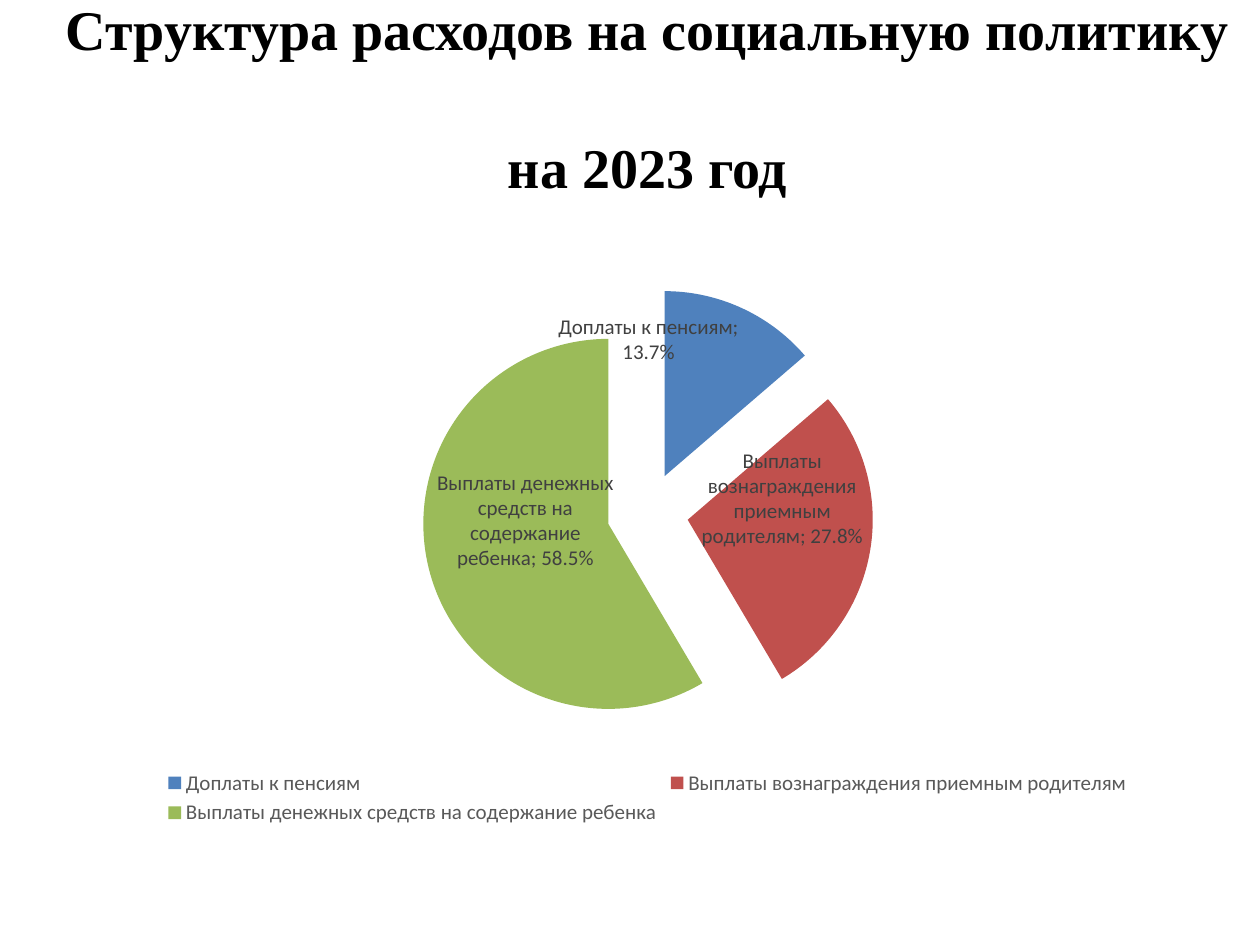
from lxml import etree
from pptx import Presentation
from pptx.chart.data import CategoryChartData
from pptx.dml.color import RGBColor
from pptx.enum.chart import XL_CHART_TYPE, XL_LABEL_POSITION, XL_LEGEND_POSITION
from pptx.enum.text import MSO_ANCHOR, MSO_AUTO_SIZE, PP_ALIGN
from pptx.oxml.ns import qn
from pptx.util import Inches, Pt

PIE = XL_CHART_TYPE.PIE
INSIDE_END = XL_LABEL_POSITION.INSIDE_END
BOTTOM = XL_LEGEND_POSITION.BOTTOM
MIDDLE = MSO_ANCHOR.MIDDLE
NO_AUTOFIT = MSO_AUTO_SIZE.NONE
CENTER = PP_ALIGN.CENTER

COLORS = {"title": "000000", "label": "404040", "legend": "595959"}
TITLE_LINES = ["Структура расходов на социальную политику", "на 2023 год"]
EXPENSES = [
    ("Доплаты к пенсиям", 0.137, "4F81BD"),
    ("Выплаты вознаграждения приемным родителям", 0.278, "C0504D"),
    ("Выплаты денежных средств на содержание ребенка", 0.585, "9BBB59"),
]


def set_font(font, name, size, color, bold=False):
    font.name = name
    font.size = Pt(size)
    font.bold = bold
    font.color.rgb = RGBColor.from_string(COLORS[color])


def set_title(s):
    title = s.shapes.title
    title.left, title.top = Inches(0.39), Inches(0.29)
    title.width, title.height = Inches(9.5), Inches(0.86)
    tf = title.text_frame
    tf.text = "\n".join(TITLE_LINES)
    tf.word_wrap = True
    tf.auto_size = NO_AUTOFIT
    tf.vertical_anchor = MIDDLE
    tf.margin_top = Inches(0.15)
    for p in tf.paragraphs:
        p.alignment = CENTER
        p.space_before = Pt(0)
        set_font(p.font, "Times New Roman", 32, "title", bold=True)
    tf.paragraphs[0].space_after = Pt(40)


def explode(series, percent):
    """Pull all slices away from the centre of the pie."""
    explosion = etree.Element(qn("c:explosion"), val=str(percent))
    series._element.find(qn("c:dPt")).addprevious(explosion)


def format_labels(plot):
    plot.has_data_labels = True
    labels = plot.data_labels
    labels.show_category_name = True
    labels.show_value = True
    labels.show_percentage = False
    labels.number_format = "0.0%"
    labels.number_format_is_linked = False
    labels.position = INSIDE_END
    set_font(labels.font, "Calibri", 12, "label")
    separator = etree.Element(qn("c:separator"))
    separator.text = "; "
    labels._element.find(qn("c:showBubbleSize")).addnext(separator)


def add_expense_pie(s):
    data = CategoryChartData(number_format="0.0%")
    data.categories = [name for name, _, _ in EXPENSES]
    data.add_series("Series 1", [share for _, share, _ in EXPENSES])
    chart = s.shapes.add_chart(
        PIE, Inches(0.28), Inches(1.7), Inches(9.72), Inches(4.89), data
    ).chart
    chart.has_title = False
    set_font(chart.font, "Calibri", 10, "title")
    chart.has_legend = True
    chart.legend.position = BOTTOM
    chart.legend.include_in_layout = False
    set_font(chart.legend.font, "Calibri", 12, "legend")

    plot = chart.plots[0]
    plot.vary_by_categories = True
    series = plot.series[0]
    for i, (_, _, color) in enumerate(EXPENSES):
        fill = series.points[i].format.fill
        fill.solid()
        fill.fore_color.rgb = RGBColor.from_string(color)
    explode(series, 22)
    format_labels(plot)


def main():
    prs = Presentation()
    prs.slide_width, prs.slide_height = Inches(10), Inches(7.5)
    s = prs.slides.add_slide(prs.slide_layouts[5])
    set_title(s)
    add_expense_pie(s)
    prs.save("out.pptx")


if __name__ == "__main__":
    main()
